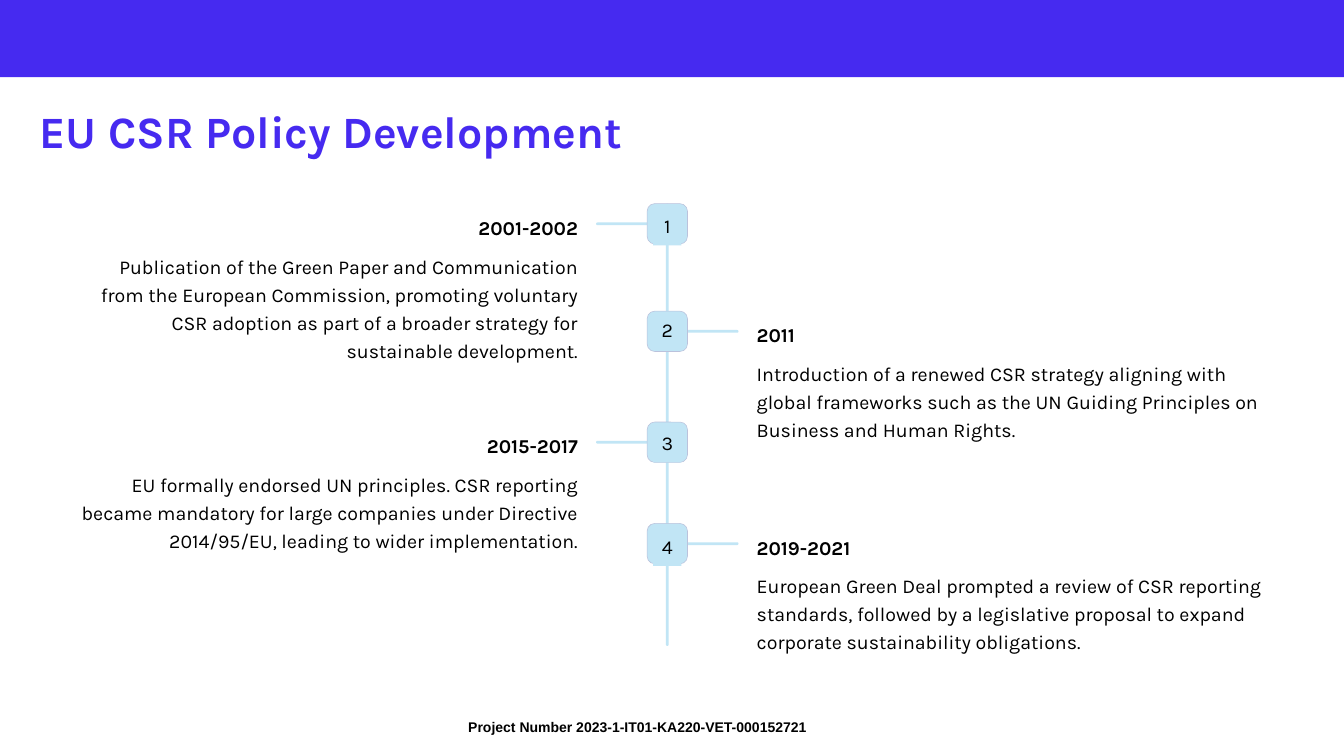
import pptx
import pptx.dml.color
import pptx.enum.shapes
import pptx.enum.text
import pptx.util

Pt = pptx.util.Pt
SHAPE = pptx.enum.shapes.MSO_SHAPE
ALIGN = pptx.enum.text.PP_ALIGN
ANCHOR = pptx.enum.text.MSO_ANCHOR

VIOLET, SKY, EDGE, BLACK = "462AF0", "C1E5F5", "BBC2DC", "000000"
BADGE = 43.2
BAR = 2.9

# badge top within the timeline, drop of the number, side, text width, period, event
MILESTONES = [
    (0, 6.5, "left", 542.2, "2001-2002",
     "Publication of the Green Paper and Communication from the European Commission, "
     "promoting voluntary CSR adoption as part of a broader strategy for sustainable "
     "development."),
    (115.2, 2.2, "right", 552.2, "2011",
     "Introduction of a renewed CSR strategy aligning with global frameworks such as "
     "the UN Guiding Principles on Business and Human Rights."),
    (234, 5, "left", 542.2, "2015-2017",
     "EU formally endorsed UN principles. CSR reporting became mandatory for large "
     "companies under Directive 2014/95/EU, leading to wider implementation."),
    (342.7, 7.2, "right", 559.4, "2019-2021",
     "European Green Deal prompted a review of CSR reporting standards, followed by a "
     "legislative proposal to expand corporate sustainability obligations."),
]


def color(hex_code):
    return pptx.dml.color.RGBColor.from_string(hex_code)


def add_block(slide, kind, box, fill, corner=None, edge=None):
    block = slide.shapes.add_shape(kind, *map(Pt, box))
    block.shadow.inherit = False
    block.fill.solid()
    block.fill.fore_color.rgb = color(fill)
    if corner is not None:
        block.adjustments[0] = corner
    if edge:
        block.line.color.rgb = color(edge)
        block.line.width = Pt(0.6)
    else:
        block.line.fill.background()
    return block


def write(holder, text, frame_format, paragraph_format, size, bold=False,
          name="Karla", ink=BLACK):
    frame = holder.text_frame
    for key, value in frame_format.items():
        setattr(frame, key, value)
    paragraph = frame.paragraphs[0]
    for key, value in paragraph_format.items():
        setattr(paragraph, key, value)
    run = paragraph.add_run()
    run.text = text
    for key, value in {"name": name, "size": Pt(size), "bold": bold}.items():
        setattr(run.font, key, value)
    run.font.color.rgb = color(ink)


def write_tight(holder, text, alignment, spacing, bold=False):
    """Text without margins, on lines of a fixed height."""
    margins = {f"margin_{side}": 0 for side in ("left", "top", "right", "bottom")}
    write(holder, text,
          {**margins, "word_wrap": True, "vertical_anchor": ANCHOR.TOP},
          {"alignment": alignment, "line_spacing": Pt(spacing)}, 21, bold)


def add_header(slide, box):
    left, top, width, height = box
    add_block(slide, SHAPE.RECTANGLE, box, VIOLET)
    title = slide.shapes.title
    place = {"left": left + 35.3, "top": top + 99.3, "width": 1242, "height": 90.7}
    for key, value in place.items():
        setattr(title, key, Pt(value))
    write(title, "EU CSR Policy Development",
          {"vertical_anchor": ANCHOR.MIDDLE, "word_wrap": True},
          {"alignment": ALIGN.LEFT, "line_spacing": 0.9}, 48, True, ink=VIOLET)


def add_milestone(slide, axis, top, number, drop, side, width, period, event):
    """One numbered stop, with its text on one side of the axis."""
    if side == "left":
        arm_left, text_right, alignment = axis - 76.3, axis - 95.8, ALIGN.RIGHT
        period_left, event_left = text_right - 252.7, text_right - width
    else:
        arm_left, alignment = axis + 18.7, ALIGN.LEFT
        period_left = event_left = axis + 95.8

    add_block(slide, SHAPE.ROUNDED_RECTANGLE, (arm_left, top + 20.2, 57.6, BAR), SKY, 0.5)
    add_block(slide, SHAPE.ROUNDED_RECTANGLE,
              (axis - BADGE / 2, top, BADGE, BADGE), SKY, 0.187, EDGE)
    label = add_block(slide, SHAPE.RECTANGLE, (axis - 15.1, top + drop, 30.2, 38.2), SKY)
    write_tight(label, str(number), ALIGN.CENTER, 30)

    heading = slide.shapes.add_textbox(*map(Pt, (period_left, top + 6.5, 252.7, 31.7)))
    write_tight(heading, period, alignment, 31.5, True)
    body = slide.shapes.add_textbox(*map(Pt, (event_left, top + 49.7, width, 92.2)))
    write_tight(body, event, alignment, 30)


def add_timeline(slide, box):
    left, top, width, height = box
    axis = left + width / 2
    add_block(slide, SHAPE.ROUNDED_RECTANGLE, (axis - BAR / 2, top, BAR, height), SKY, 0.5)
    for number, (offset, *details) in enumerate(MILESTONES, 1):
        add_milestone(slide, axis, top + offset, number, *details)


def add_footer(slide, box):
    footer = slide.shapes.add_textbox(*map(Pt, box))
    write(footer, "Project Number 2023-1-IT01-KA220-VET-000152721",
          {"word_wrap": False}, {"alignment": ALIGN.LEFT}, 15, True, "Arial")


def main():
    deck = pptx.Presentation()
    deck.slide_width, deck.slide_height = Pt(1440), Pt(810)
    slide = deck.slides.add_slide(deck.slide_layouts[5])
    add_footer(slide, (494.6, 766.8, 382.3, 25.2))
    add_header(slide, (0, -1.4, 1440, 84.2))
    add_timeline(slide, (77, 218.2, 1276, 473.8))
    deck.save("out.pptx")


if __name__ == "__main__":
    main()
